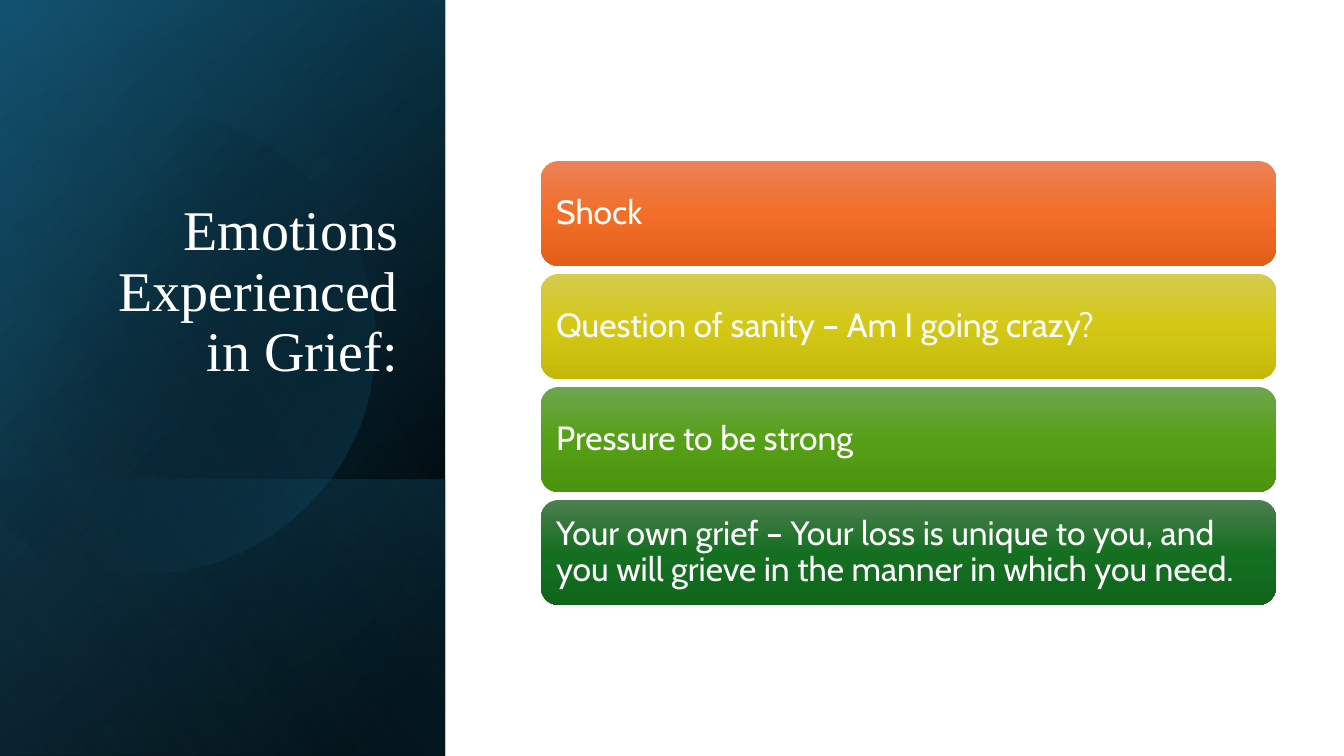
from math import cos, radians, sin

from lxml.etree import SubElement
from pptx import Presentation
from pptx.dml.color import RGBColor
from pptx.enum.shapes import MSO_SHAPE as Shape
from pptx.enum.text import MSO_ANCHOR as Anchor, PP_ALIGN as Align
from pptx.oxml.ns import qn
from pptx.util import Pt

PX = 12192000 / 1344
PANEL_WIDTH, PAGE_HEIGHT = 445, 756
WHITE = "FFFFFF"

PANEL_LAYERS = [
    (0, 220, [(8, "000000", 100), (100, "104862", 100)]),
    (0, 240, [(0, "000000", 0), (99, "156082", 46)]),
    (480, 140, [(2, "156082", 29), (100, "000000", 30)]),
]
DISC_STOPS = [(29, "000000", 0), (100, "156082", 43)]
SHEEN_LAYER = (0, 150, [(0, "000000", 0), (99, "46B1E1", 11)])

EMOTIONS = [
    ("Shock", "ED8257", "F26E29", "E25F1A"),
    ("Question of sanity – Am I going crazy?", "D5CB4E", "D4C815", "C4B90B"),
    ("Pressure to be strong", "6DA64E", "56A017", "4C930F"),
    ("Your own grief – Your loss is unique to you, and you will grieve "
     "in the manner in which you need.", "4D7E50", "156F21", "0F661B"),
]


def px(*lengths):
    """Turn pixel lengths into EMU."""
    return [round(length * PX) for length in lengths]


def color(code):
    """Turn a hex string into a colour."""
    return RGBColor.from_string(code)


def paint(shape, angle, stops):
    """Fill a shape with a linear gradient of (position, colour, opacity) stops."""
    shape.shadow.inherit = False
    shape.line.fill.background()
    shape.fill.gradient()
    gradient = shape.element.spPr.find(qn("a:gradFill"))
    for child in list(gradient):
        gradient.remove(child)
    stop_list = SubElement(gradient, qn("a:gsLst"))
    for position, code, opacity in stops:
        stop = SubElement(stop_list, qn("a:gs"), pos=str(position * 1000))
        tint = SubElement(stop, qn("a:srgbClr"), val=str(color(code)))
        if opacity < 100:
            SubElement(tint, qn("a:alpha"), val=str(opacity * 1000))
    SubElement(gradient, qn("a:lin"), ang=str(angle * 60000), scaled="0")


def add_layer(page, top, angle, stops):
    """Add a gradient layer from top to the foot of the left panel."""
    layer = page.shapes.add_shape(
        Shape.RECTANGLE, *px(0, top, PANEL_WIDTH, PAGE_HEIGHT - top))
    paint(layer, angle, stops)


def add_disc(page, center_x, center_y, radius, stops):
    """Add a disc cut off at the left edge of the page."""
    turns = [radians(degree) for degree in range(0, 360, 3)]
    points = [(max(0, center_x + radius * cos(turn)), center_y + radius * sin(turn))
              for turn in turns]
    builder = page.shapes.build_freeform(*points[0], scale=PX)
    builder.add_line_segments(points[1:], close=True)
    paint(builder.convert_to_shape(), 30, stops)


def write(shape, text, font, size, align, anchor):
    """Write one white paragraph into a shape."""
    frame = shape.text_frame
    frame.word_wrap = True
    frame.vertical_anchor = anchor
    para = frame.paragraphs[0]
    para.text = text
    para.alignment = align
    para.line_spacing = 0.9
    para.font.name = font
    para.font.size = Pt(size)
    para.font.color.rgb = color(WHITE)


def add_title(page, text):
    """Add the right-aligned title on the panel."""
    box = page.shapes.add_textbox(*px(64, 185, 344, 204))
    write(box, text, "Times New Roman", 40, Align.RIGHT, Anchor.BOTTOM)


def add_bar(page, top, text, shades):
    """Add a rounded gradient bar holding one emotion."""
    bar = page.shapes.add_shape(Shape.ROUNDED_RECTANGLE, *px(541, top, 735, 105))
    paint(bar, 90, [(50 * step, shade, 100) for step, shade in enumerate(shades)])
    frame = bar.text_frame
    frame.margin_left, frame.margin_right = px(10, 10)
    write(bar, text, "Cabin", 24, Align.LEFT, Anchor.MIDDLE)


def main():
    """Build and save the slide."""
    deck = Presentation()
    deck.slide_width, deck.slide_height = px(1344, PAGE_HEIGHT)
    page = deck.slides.add_slide(deck.slide_layouts[6])
    for layer in PANEL_LAYERS:
        add_layer(page, *layer)
    add_disc(page, 143, 342, 232, DISC_STOPS)
    add_layer(page, *SHEEN_LAYER)
    add_title(page, "Emotions Experienced in Grief:")
    for row, (text, *shades) in enumerate(EMOTIONS):
        add_bar(page, 161 + 113 * row, text, shades)
    deck.save("out.pptx")


if __name__ == "__main__":
    main()
